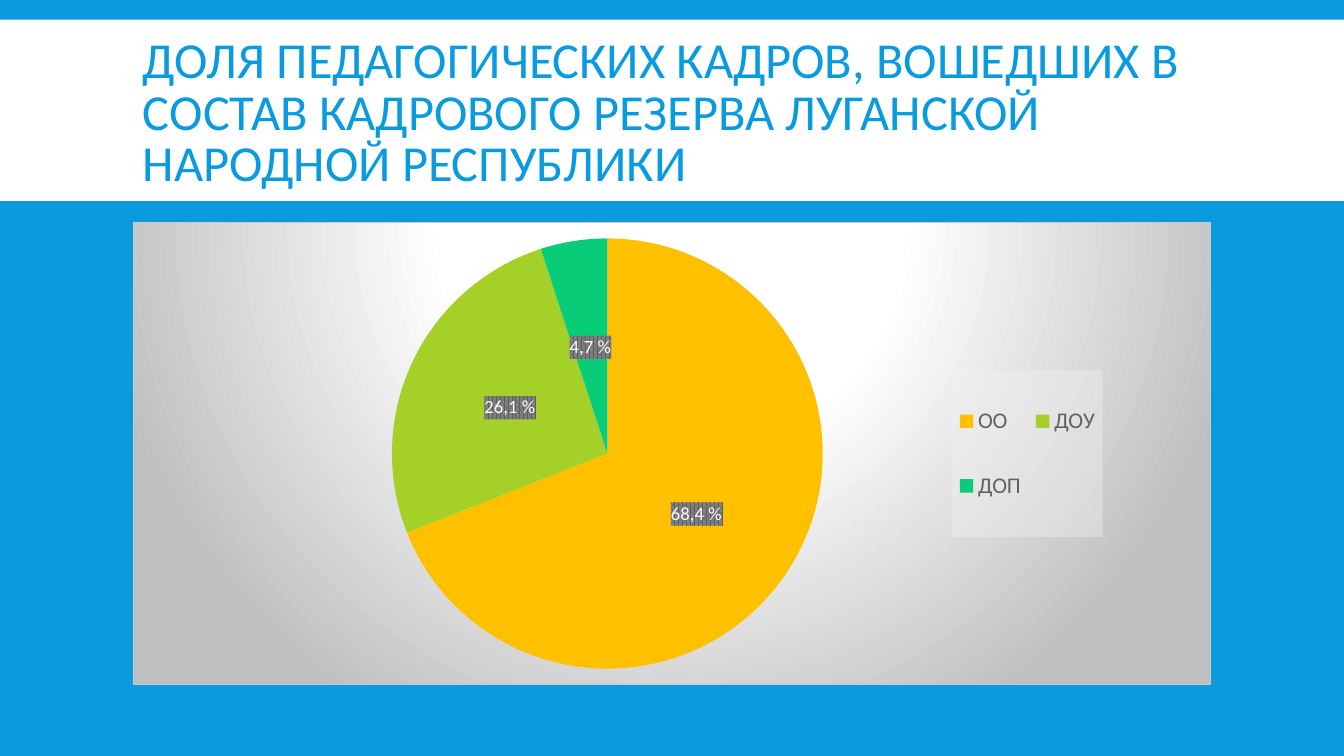
import pptx
import pptx.chart.data
import pptx.dml.color
import pptx.enum.chart
import pptx.enum.shapes
import pptx.enum.text
import pptx.oxml
import pptx.oxml.ns
import pptx.util

COLORS = {
    "blue": "099BDD", "white": "FFFFFF", "silver": "BFBFBF", "border": "CACACA",
    "gray": "616161", "legend": "F2F2F2", "label_dark": "5E5E5E", "label_light": "828282",
}
FONT = "Calibri"
SHARES = [
    ("ОО", 69, "68,4 %", "FFC000"),
    ("ДОУ", 26, "26,1 %", "A5D028"),
    ("ДОП", 5, "4,7 %", "08CC78"),
]
NAMESPACES = pptx.oxml.ns.nsdecls("c", "a")


def rgb(name):
    return pptx.dml.color.RGBColor.from_string(COLORS.get(name, name))


def hex_fill(name, opacity=100):
    return (f'<a:srgbClr val="{COLORS[name]}">'
            f'<a:alpha val="{opacity * 1000}"/></a:srgbClr>')


def shape_properties(content):
    return pptx.oxml.parse_xml(f"<c:spPr {NAMESPACES}>{content}</c:spPr>")


def manual_layout(x, y, w, h, inner=False):
    target = '<c:layoutTarget val="inner"/>' if inner else ""
    sizes = "".join(f'<c:{key} val="{value}"/>' for key, value in zip("xywh", (x, y, w, h)))
    return pptx.oxml.parse_xml(
        f"<c:layout {NAMESPACES}><c:manualLayout>{target}"
        f'<c:xMode val="edge"/><c:yMode val="edge"/>{sizes}</c:manualLayout></c:layout>')


def set_layout(parent, layout, index):
    old = parent.find(pptx.oxml.ns.qn("c:layout"))
    if old is not None:
        parent.remove(old)
    parent.insert(index, layout)


class SlideBuilder:
    def __init__(self, prs):
        self.s = prs.slides.add_slide(prs.slide_layouts[6])

    def background(self, color):
        fill = self.s.background.fill
        fill.solid()
        fill.fore_color.rgb = rgb(color)

    def style(self, font, size, color):
        font.name = FONT
        font.size = pptx.util.Pt(size)
        font.bold = False
        font.color.rgb = rgb(color)

    def band(self, box, color):
        sp = self.s.shapes.add_shape(
            pptx.enum.shapes.MSO_SHAPE.RECTANGLE, *map(pptx.util.Pt, box))
        sp.shadow.inherit = False
        sp.fill.solid()
        sp.fill.fore_color.rgb = rgb(color)
        sp.line.fill.background()

    def title(self, box, text, size, color):
        tf = self.s.shapes.add_textbox(*map(pptx.util.Pt, box)).text_frame
        tf.word_wrap = True
        tf.vertical_anchor = pptx.enum.text.MSO_ANCHOR.MIDDLE
        p = tf.paragraphs[0]
        p.line_spacing = 0.85
        r = p.add_run()
        r.text = text
        self.style(r.font, size, color)

    def pie(self, box, shares):
        data = pptx.chart.data.CategoryChartData()
        data.categories = [share[0] for share in shares]
        data.add_series("Series 1", [share[1] for share in shares])
        chart = self.s.shapes.add_chart(
            pptx.enum.chart.XL_CHART_TYPE.PIE, *map(pptx.util.Pt, box), data).chart
        chart.has_title = False
        self.style(chart.font, 10, "white")
        chart.plots[0].vary_by_categories = True
        for point, (_, _, label, color) in zip(chart.plots[0].series[0].points, shares):
            point.format.fill.solid()
            point.format.fill.fore_color.rgb = rgb(color)
            point.format.line.fill.background()
            self.label(point.data_label, label)
        self.legend(chart)
        self.chart_area(chart)

    def label(self, label, text):
        tf = label.text_frame
        r = tf.paragraphs[0].add_run()
        r.text = text
        self.style(r.font, 13.3, "white")
        label.position = pptx.enum.chart.XL_LABEL_POSITION.CENTER
        tf._txBody.getparent().addnext(shape_properties(
            f'<a:pattFill prst="pct75"><a:fgClr>{hex_fill("label_dark")}</a:fgClr>'
            f'<a:bgClr>{hex_fill("label_light")}</a:bgClr></a:pattFill>'))

    def legend(self, chart):
        chart.has_legend = True
        legend = chart.legend
        legend.position = pptx.enum.chart.XL_LEGEND_POSITION.RIGHT
        legend.include_in_layout = False
        self.style(legend.font, 16, "gray")
        element = legend._element
        has_position = element.find(pptx.oxml.ns.qn("c:legendPos")) is not None
        set_layout(element, manual_layout(0.76, 0.32, 0.14, 0.36), int(has_position))
        element.find(pptx.oxml.ns.qn("c:overlay")).addnext(shape_properties(
            f'<a:solidFill>{hex_fill("legend", 39)}</a:solidFill>'))

    def chart_area(self, chart):
        area = chart._chartSpace.find(pptx.oxml.ns.qn("c:chart"))
        set_layout(area.find(pptx.oxml.ns.qn("c:plotArea")),
                   manual_layout(0.24, 0.03, 0.4, 0.94, inner=True), 0)
        stops = "".join(
            f'<a:gs pos="{position * 1000}">{hex_fill(color)}</a:gs>'
            for position, color in ((0, "white"), (39, "white"), (100, "silver")))
        area.addnext(shape_properties(
            f'<a:gradFill><a:gsLst>{stops}</a:gsLst><a:path path="circle">'
            '<a:fillToRect l="50000" t="-80000" r="50000" b="180000"/></a:path></a:gradFill>'
            f'<a:ln w="9525"><a:solidFill>{hex_fill("border")}</a:solidFill></a:ln>'))


def main():
    prs = pptx.Presentation()
    prs.slide_width = pptx.util.Pt(960)
    prs.slide_height = pptx.util.Pt(540)
    slide = SlideBuilder(prs)
    slide.background("blue")
    slide.band((0, 14, 960, 129.6), "white")
    slide.title(
        (95, 22.5, 770, 118.8),
        "ДОЛЯ ПЕДАГОГИЧЕСКИХ КАДРОВ, ВОШЕДШИХ В СОСТАВ КАДРОВОГО РЕЗЕРВА "
        "ЛУГАНСКОЙ НАРОДНОЙ РЕСПУБЛИКИ", 36, "blue")
    slide.pie((95, 158.5, 770, 331), SHARES)
    prs.save("out.pptx")


if __name__ == "__main__":
    main()
